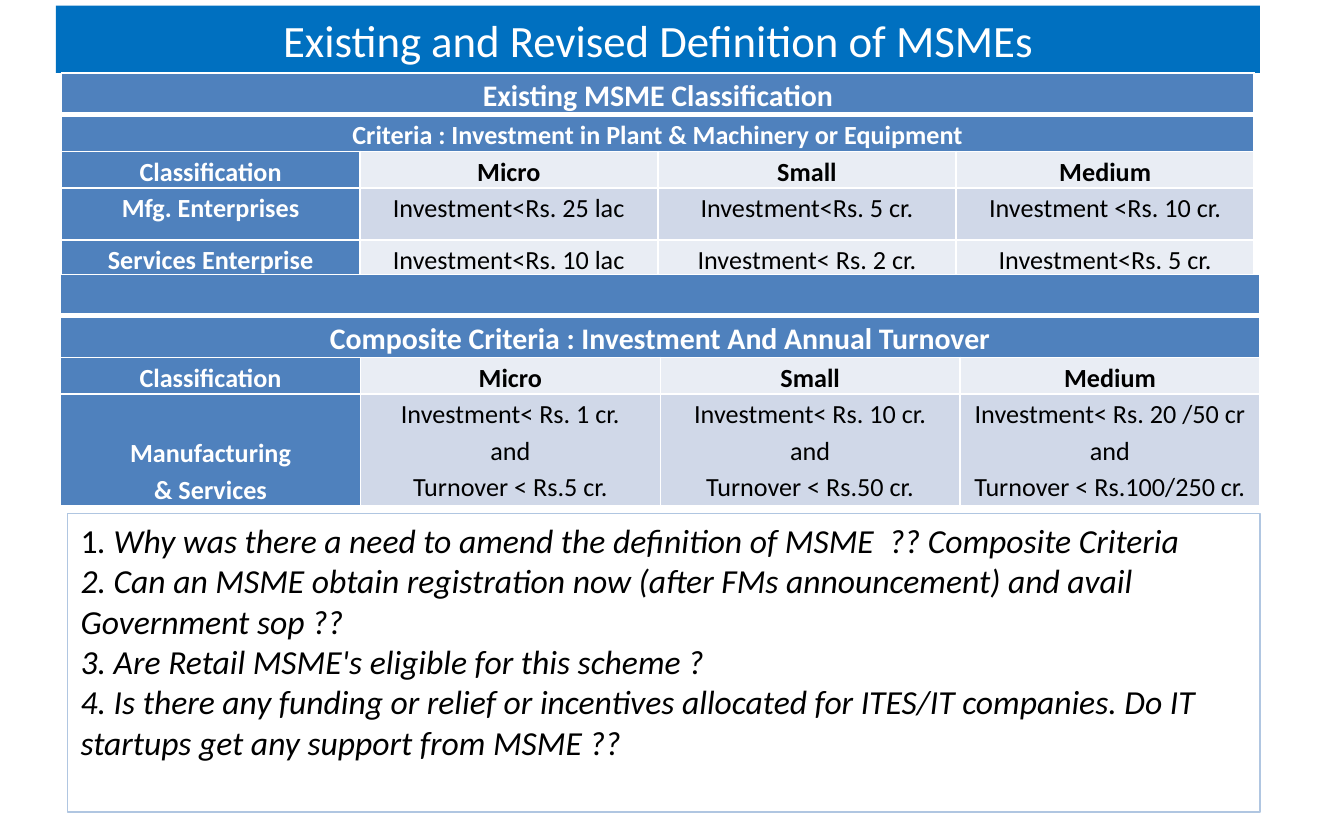
from lxml import etree
from pptx import Presentation
from pptx.dml.color import RGBColor
from pptx.enum.text import MSO_ANCHOR, MSO_AUTO_SIZE, PP_ALIGN
from pptx.oxml.ns import qn
from pptx.util import Pt

CENTER, LEFT = PP_ALIGN.CENTER, PP_ALIGN.LEFT
TOP, MIDDLE, BOTTOM = MSO_ANCHOR.TOP, MSO_ANCHOR.MIDDLE, MSO_ANCHOR.BOTTOM
NO_AUTOFIT = MSO_AUTO_SIZE.NONE
FONT = "Calibri"
COLORS = {
    "title": "0070C0",
    "header": "4F81BD",
    "light_band": "E9EDF4",
    "dark_band": "D0D8E8",
    "outline": "B0C6E1",
    "white": "FFFFFF",
    "black": "000000",
}
SIZES = ["Micro", "Small", "Medium"]
EXISTING = {
    "banners": [("Existing MSME Classification", 16),
                ("Criteria : Investment in Plant & Machinery or Equipment", 14)],
    "rows": [
        ["Classification", *SIZES],
        ["Mfg. Enterprises", "Investment<Rs. 25 lac", "Investment<Rs. 5 cr.",
         "Investment <Rs. 10 cr."],
        ["Services Enterprise", "Investment<Rs. 10 lac", "Investment< Rs. 2 cr.",
         "Investment<Rs. 5 cr."],
    ],
    "heights": [22.5, 19, 19.5, 28, 28.8],
}
REVISED = {
    "banners": [("", 16), ("Composite Criteria : Investment And Annual Turnover", 16)],
    "rows": [
        ["Classification", *SIZES],
        ["Manufacturing\n& Services",
         "Investment< Rs. 1 cr.\nand\nTurnover < Rs.5 cr.",
         "Investment< Rs. 10 cr.\nand\nTurnover < Rs.50 cr.",
         "Investment< Rs. 20 /50 cr and\nTurnover < Rs.100/250 cr."],
    ],
    "heights": [22, 22.5, 19.5, 60],
}
QUESTIONS = [
    "1. Why was there a need to amend the definition of MSME\u00a0 ?? Composite Criteria",
    "2. Can an MSME obtain registration now (after FMs announcement) and avail "
    "Government sop ??",
    "3. Are Retail MSME's eligible for this scheme ?",
    "4. Is there any funding or relief or incentives allocated for ITES/IT companies. "
    "Do IT startups get any support from MSME ??",
]


def rgb(name):
    return RGBColor.from_string(COLORS[name])


def assign(target, **values):
    for name, value in values.items():
        setattr(target, name, value)


def add_run(paragraph, text, size, color, bold=False, italic=False):
    run = paragraph.add_run()
    run.text = text
    assign(run.font, name=FONT, size=Pt(size), bold=bold, italic=italic)
    run.font.color.rgb = rgb(color)


def place(shape, box):
    left, top, width, height = map(Pt, box)
    assign(shape, left=left, top=top, width=width, height=height)


def fill(item, color):
    item.fill.solid()
    item.fill.fore_color.rgb = rgb(color)


def set_borders(cell, widths):
    """Draw white borders; widths maps L, R, T and B to points."""
    properties = cell._tc.get_or_add_tcPr()
    for side, width in widths.items():
        line = etree.SubElement(properties, qn(f"a:ln{side}"), w=str(Pt(width)))
        solid = etree.SubElement(line, qn("a:solidFill"))
        etree.SubElement(solid, qn("a:srgbClr"), val=COLORS["white"])


def fill_title(title, box):
    place(title, box)
    fill(title, "title")
    frame = title.text_frame
    assign(frame, auto_size=NO_AUTOFIT, vertical_anchor=MIDDLE, word_wrap=True)
    frame.paragraphs[0].alignment = CENTER
    add_run(frame.paragraphs[0], "Existing and Revised Definition of MSMEs", 24, "white")


def write_cell(cell, text, size, color, bold):
    assign(cell, margin_left=Pt(5), margin_right=Pt(5), margin_top=0, margin_bottom=0)
    if not text:
        return
    frame = cell.text_frame
    for index, line in enumerate(text.split("\n")):
        paragraph = frame.add_paragraph() if index else frame.paragraphs[0]
        assign(paragraph, alignment=CENTER, line_spacing=1.15)
        add_run(paragraph, line, size, color, bold)


def add_classification(slide, box, content):
    """Two full-width banners above a header row and banded rows."""
    banners, rows, heights = content["banners"], content["rows"], content["heights"]
    columns = len(rows[0])
    table = slide.shapes.add_table(len(heights), columns, *map(Pt, box)).table
    for column in table.columns:
        column.width = Pt(box[2] / columns)
    for r, height in enumerate(heights):
        table.rows[r].height = Pt(height)
        for c in range(columns):
            set_borders(table.cell(r, c), {"L": 1, "R": 1, "T": 3 if r == 1 else 1,
                                           "B": 3 if r == 0 else 1})
            fill(table.cell(r, c), "header")

    for r, (text, size) in enumerate(banners):
        table.cell(r, 0).merge(table.cell(r, columns - 1))
        write_cell(table.cell(r, 0), text, size, "white", True)

    for r, row in enumerate(rows):
        for c, text in enumerate(row):
            cell = table.cell(r + len(banners), c)
            write_cell(cell, text, 14, "black" if c else "white", r == 0 or c == 0)
            if c:
                fill(cell, "dark_band" if r % 2 else "light_band")
            elif "\n" in text:
                cell.vertical_anchor = BOTTOM


def fill_questions(body, box):
    place(body, box)
    body.line.color.rgb = rgb("outline")
    body.line.width = Pt(0.75)
    frame = body.text_frame
    assign(frame, auto_size=NO_AUTOFIT, vertical_anchor=TOP, word_wrap=True)
    for index, question in enumerate(QUESTIONS):
        paragraph = frame.add_paragraph() if index else frame.paragraphs[0]
        assign(paragraph, alignment=LEFT, space_before=Pt(0))
        properties = paragraph._p.get_or_add_pPr()
        properties.set("marL", "0")
        properties.set("indent", "0")
        etree.SubElement(properties, qn("a:buNone"))
        upright = 0 if index else 1
        if upright:
            add_run(paragraph, question[:upright], 18, "black")
        add_run(paragraph, question[upright:], 18, "black", italic=True)


def main():
    deck = Presentation()
    assign(deck, slide_width=Pt(720), slide_height=Pt(450))
    slide = deck.slides.add_slide(deck.slide_layouts[1])
    fill_title(slide.shapes.title, (30, 3, 645, 36))
    fill_questions(slide.placeholders[1], (36, 275, 639, 160))
    add_classification(slide, (33, 39, 639, 118), EXISTING)
    add_classification(slide, (32.5, 147, 642.5, 124), REVISED)
    deck.save("out.pptx")


if __name__ == "__main__":
    main()
